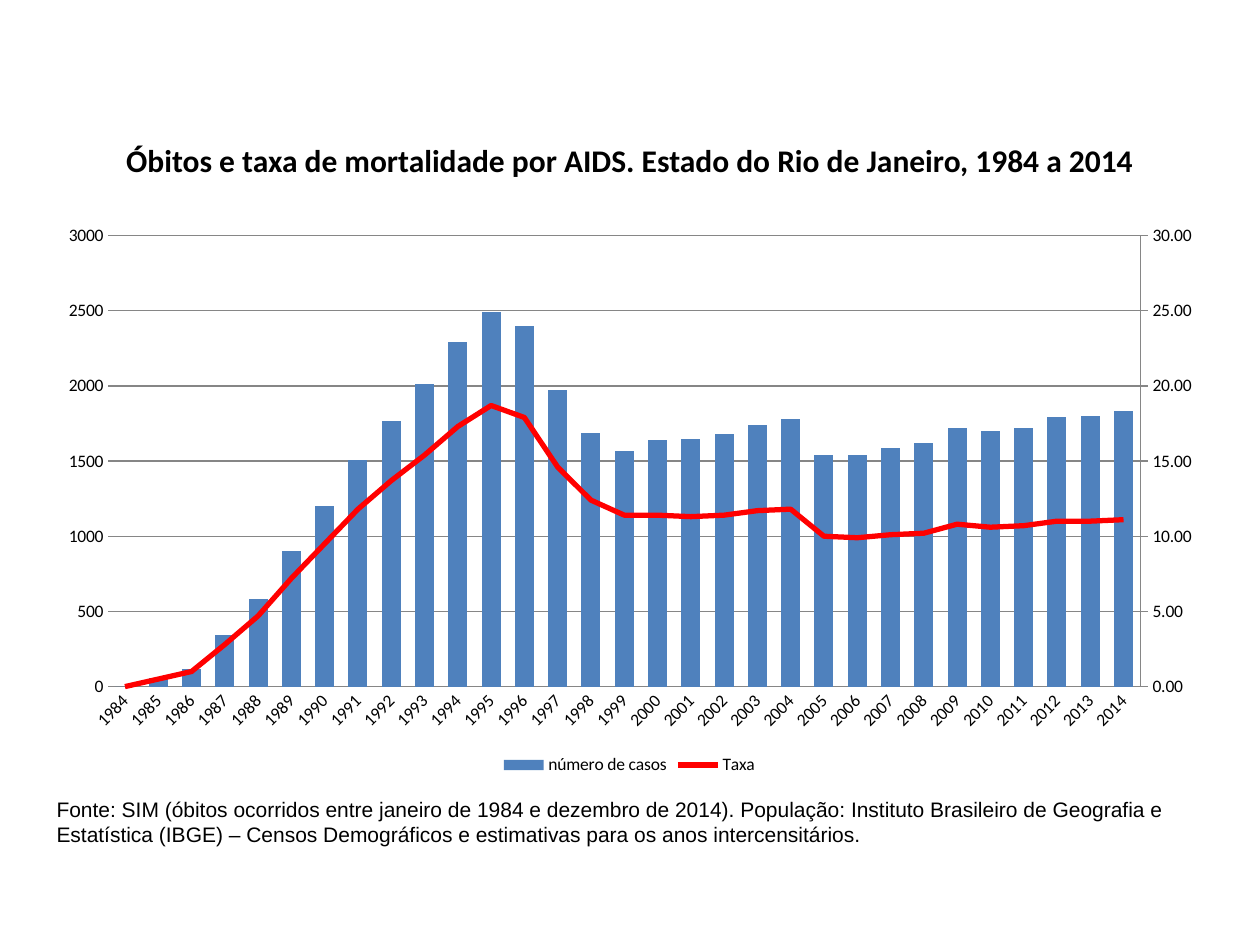
from dataclasses import dataclass

from lxml import etree
from pptx import Presentation
from pptx.chart.data import CategoryChartData
from pptx.dml.color import RGBColor
from pptx.enum.chart import (XL_CHART_TYPE, XL_LEGEND_POSITION, XL_MARKER_STYLE,
                             XL_TICK_MARK)
from pptx.enum.text import MSO_AUTO_SIZE, PP_ALIGN
from pptx.oxml import parse_xml
from pptx.oxml.ns import nsdecls, qn
from pptx.util import Inches, Pt

BLACK = RGBColor(0x00, 0x00, 0x00)
BLUE = RGBColor(0x4F, 0x81, 0xBD)
DARK_RED = RGBColor(0xC0, 0x50, 0x4D)
RED = RGBColor(0xFF, 0x00, 0x00)
GRAY = RGBColor(0x86, 0x86, 0x86)

YEARS = [str(year) for year in range(1984, 2015)]
DEATHS = [0, 60, 120, 340, 580, 900, 1200, 1510, 1770, 2010, 2290, 2490, 2400, 1970, 1690,
          1570, 1640, 1650, 1680, 1740, 1780, 1540, 1540, 1590, 1620, 1720, 1700, 1720,
          1790, 1800, 1830]
RATES = [0, 0.5, 1, 2.8, 4.7, 7.2, 9.5, 11.8, 13.7, 15.4, 17.3, 18.7, 17.9, 14.6, 12.4,
         11.4, 11.4, 11.3, 11.4, 11.7, 11.8, 10, 9.9, 10.1, 10.2, 10.8, 10.6, 10.7, 11,
         11, 11.1]

LINE_CHART = f"""<c:lineChart {nsdecls('c')}>
  <c:grouping val="standard"/><c:varyColors val="0"/>
  <c:marker val="1"/><c:axId val="5001"/><c:axId val="5002"/>
</c:lineChart>"""

HIDDEN_YEAR_AXIS = f"""<c:catAx {nsdecls('c')}>
  <c:axId val="5001"/><c:scaling><c:orientation val="minMax"/></c:scaling>
  <c:delete val="1"/><c:axPos val="b"/><c:crossAx val="5002"/><c:crosses val="autoZero"/>
</c:catAx>"""

RATE_AXIS = f"""<c:valAx {nsdecls('c', 'a')}>
  <c:axId val="5002"/>
  <c:scaling><c:orientation val="minMax"/><c:max val="30"/><c:min val="0"/></c:scaling>
  <c:delete val="0"/><c:axPos val="r"/>
  <c:numFmt formatCode="0.00" sourceLinked="0"/>
  <c:majorTickMark val="cross"/><c:minorTickMark val="none"/><c:tickLblPos val="nextTo"/>
  <c:spPr><a:ln w="9525"><a:solidFill><a:srgbClr val="{GRAY}"/></a:solidFill></a:ln></c:spPr>
  <c:crossAx val="5001"/><c:crosses val="max"/><c:majorUnit val="5"/>
</c:valAx>"""


@dataclass
class Box:
    left: float
    top: float
    width: float
    height: float

    def lengths(self) -> list:
        return [Inches(v) for v in (self.left, self.top, self.width, self.height)]


def add_text(s, box: Box, text: str, *, size: float, font: str, bold: bool = False,
             align=PP_ALIGN.LEFT) -> None:
    tf = s.shapes.add_textbox(*box.lengths()).text_frame
    tf.word_wrap = True
    tf.auto_size = MSO_AUTO_SIZE.SHAPE_TO_FIT_TEXT
    p = tf.paragraphs[0]
    p.alignment = align
    r = p.add_run()
    r.text = text
    r.font.size = Pt(size)
    r.font.name = font
    r.font.bold = bold
    r.font.color.rgb = BLACK


def set_plot_layout(plot_area, chart_box: Box, inner: Box) -> None:
    """Place the inner plot area, given in inches from the chart's corner."""
    for layout in plot_area.findall(qn("c:layout")):
        plot_area.remove(layout)
    layout = parse_xml(f"<c:layout {nsdecls('c')}/>")
    manual = etree.SubElement(layout, qn("c:manualLayout"))
    settings = {"layoutTarget": "inner", "xMode": "edge", "yMode": "edge",
                "x": inner.left / chart_box.width, "y": inner.top / chart_box.height,
                "w": inner.width / chart_box.width, "h": inner.height / chart_box.height}
    for tag, value in settings.items():
        etree.SubElement(manual, qn(f"c:{tag}")).set("val", str(value))
    plot_area.insert(0, layout)


def remove_children(element, *tags: str) -> None:
    for tag in tags:
        for child in element.findall(qn(tag)):
            element.remove(child)


def move_to_right_axis(chart, index: int):
    """Turn one column series into a line on a second axis and return it."""
    ser = chart.plots[0].series[index]._element
    bar_chart = ser.getparent()
    remove_children(ser, "c:invertIfNegative", "c:spPr")
    line_chart = parse_xml(LINE_CHART)
    line_chart.find(qn("c:varyColors")).addnext(ser)
    bar_chart.addnext(line_chart)
    last_axis = bar_chart.getparent().findall(qn("c:valAx"))[-1]
    last_axis.addnext(parse_xml(RATE_AXIS))
    last_axis.addnext(parse_xml(HIDDEN_YEAR_AXIS))
    return chart.plots[1].series[0]


def style_axes(chart) -> None:
    years, deaths = chart.category_axis, chart.value_axis
    for axis in (years, deaths):
        axis.major_tick_mark = XL_TICK_MARK.NONE
        axis.minor_tick_mark = XL_TICK_MARK.NONE
    years.format.line.color.rgb = GRAY
    years.format.line.width = Pt(0.75)
    years.tick_labels.font.size = Pt(10)
    years._element.find(qn("c:txPr")).find(qn("a:bodyPr")).set("rot", "-2700000")
    deaths.minimum_scale, deaths.maximum_scale, deaths.major_unit = 0, 3000, 500
    deaths.format.line.fill.background()
    deaths.has_major_gridlines = True
    deaths.major_gridlines.format.line.color.rgb = GRAY
    deaths.major_gridlines.format.line.width = Pt(0.75)


def add_mortality_chart(s, box: Box) -> None:
    data = CategoryChartData(number_format="General")
    data.categories = YEARS
    data.add_series("número de casos", DEATHS)
    data.add_series("População", [])
    data.add_series("Taxa", RATES)
    chart = s.shapes.add_chart(XL_CHART_TYPE.COLUMN_CLUSTERED, *box.lengths(), data).chart
    chart.has_title = False
    chart.font.name = "Calibri"
    chart.font.size = Pt(10)
    chart.font.color.rgb = BLACK
    chart.has_legend = True
    chart.legend.position = XL_LEGEND_POSITION.BOTTOM
    chart.legend.include_in_layout = False
    style_axes(chart)

    columns = chart.plots[0]
    columns.gap_width = 75
    columns.overlap = -25
    columns.vary_by_categories = False
    rate = move_to_right_axis(chart, 2)
    for series, color in zip(columns.series, (BLUE, DARK_RED)):
        series.format.fill.solid()
        series.format.fill.fore_color.rgb = color
    # An empty series without a value range takes no room between the columns.
    remove_children(columns.series[1]._element, "c:cat", "c:val")

    rate.format.line.color.rgb = RED
    rate.format.line.width = Pt(3)
    rate.marker.style = XL_MARKER_STYLE.NONE
    rate.smooth = False
    set_plot_layout(columns._element.getparent(), box, Box(0.51, 0.17, 8.19, 3.58))


def main() -> None:
    prs = Presentation()
    prs.slide_width, prs.slide_height = Inches(10), Inches(7.5)
    s = prs.slides.add_slide(prs.slide_layouts[6])
    add_mortality_chart(s, Box(0.35, 1.7, 9.29, 4.49))
    add_text(s, Box(0.59, 1.07, 8.82, 0.4),
             "Óbitos e taxa de mortalidade por AIDS. Estado do Rio de Janeiro, 1984 a 2014",
             size=18, font="Calibri", bold=True, align=PP_ALIGN.CENTER)
    add_text(s, Box(0.35, 6.27, 9.29, 0.5),
             "Fonte: SIM (óbitos ocorridos entre janeiro de 1984 e dezembro de 2014). "
             "População: Instituto Brasileiro de Geografia e Estatística (IBGE) – Censos "
             "Demográficos e estimativas para os anos intercensitários.",
             size=12, font="Arial")
    prs.save("out.pptx")


if __name__ == "__main__":
    main()
